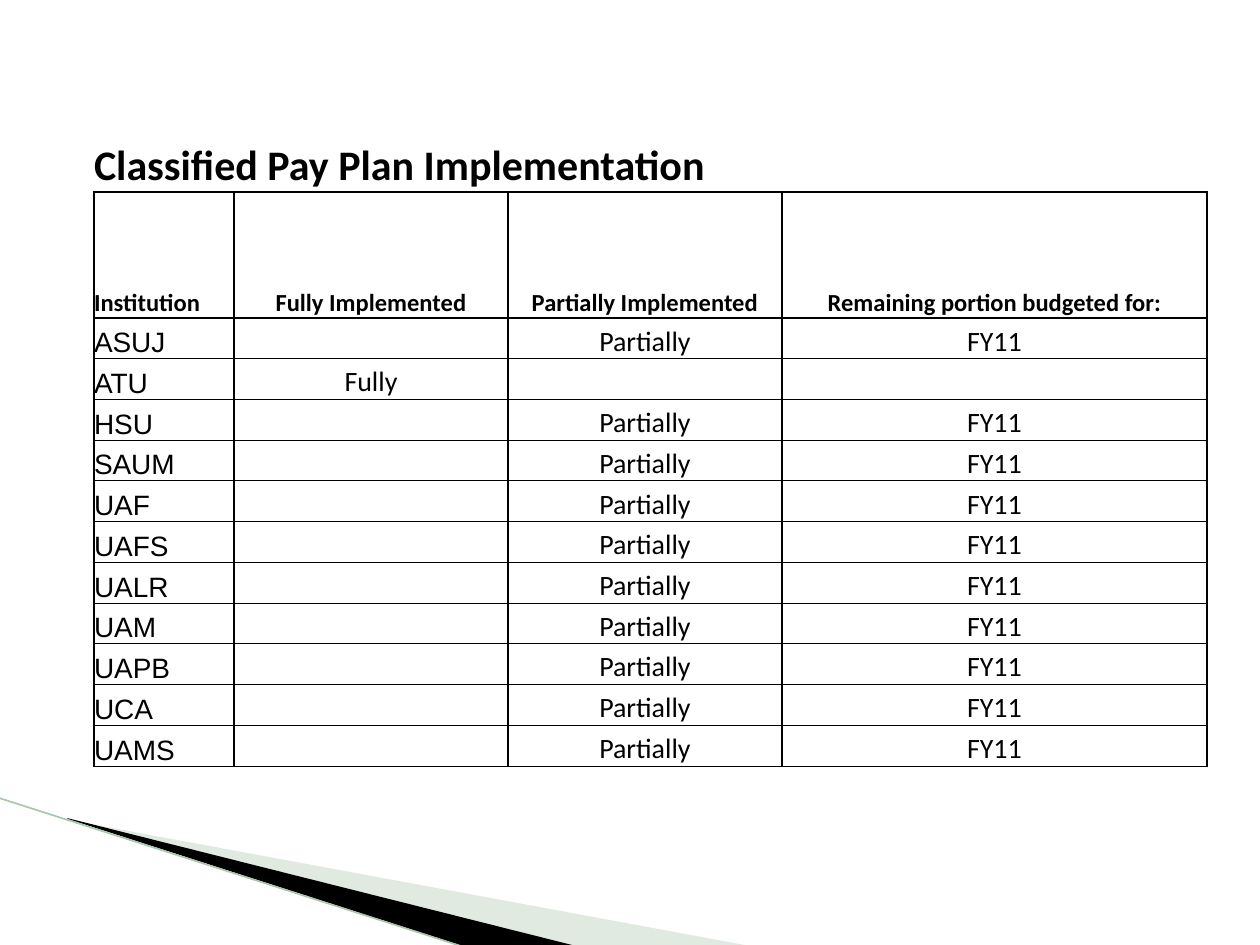
"""Build the pay plan implementation slide."""
from lxml import etree
from pptx import Presentation
from pptx.dml.color import RGBColor
from pptx.enum.shapes import MSO_CONNECTOR
from pptx.enum.text import MSO_ANCHOR, PP_ALIGN
from pptx.oxml.ns import qn
from pptx.util import Emu, Pt

SCALE = 914400 / 126
LEFT, CENTER = PP_ALIGN.LEFT, PP_ALIGN.CENTER
BOTTOM = MSO_ANCHOR.BOTTOM
STRAIGHT = MSO_CONNECTOR.STRAIGHT
BLANK_LAYOUT = 6

BLACK = RGBColor(0x00, 0x00, 0x00)
PALE_GREEN = RGBColor(0xB3, 0xCB, 0xB5)
EDGE_GREEN = RGBColor(0xAC, 0xC6, 0xAE)

PALE_WEDGE = [(69, 820), (750, 946), (575, 946), (69, 819)]
BLACK_WEDGE = [(67, 818), (576, 946), (469, 948), (68, 819)]
EDGE = [(-1, 798), (467, 948)]

TITLE = "Classified Pay Plan Implementation"
HEADINGS = ["Institution", "Fully Implemented", "Partially Implemented",
            "Remaining portion budgeted for:"]
INSTITUTIONS = ["ASUJ", "ATU", "HSU", "SAUM", "UAF", "UAFS", "UALR", "UAM",
                "UAPB", "UCA", "UAMS"]
FULLY_IMPLEMENTED = {"ATU"}

TABLE_LEFT, TABLE_TOP = 94, 105
COLUMN_WIDTHS = [140, 274, 274, 425]
TITLE_HEIGHT, HEADING_HEIGHT, BODY_HEIGHT = 87, 126, 448

TITLE_FONT = {"name": "Calibri", "size": Pt(24), "bold": True}
HEADING_FONT = {"name": "Calibri", "size": Pt(14), "bold": True}
NAME_FONT = {"name": "Arial", "size": Pt(16), "bold": False}
STATUS_FONT = {"name": "Calibri", "size": Pt(16), "bold": False}


def px(length):
    """Turn pixels into EMU."""
    return Emu(round(length * SCALE))


def add_wedge(slide, points, color, opacity=None):
    """Add a filled polygon, optionally see-through."""
    builder = slide.shapes.build_freeform(*points[0], scale=SCALE)
    builder.add_line_segments(points[1:], close=True)
    shape = builder.convert_to_shape()
    shape.shadow.inherit = False
    shape.fill.solid()
    shape.fill.fore_color.rgb = color
    shape.line.fill.background()
    if opacity is not None:
        fill_color = shape.fill._xPr.find(qn("a:solidFill"))[0]
        etree.SubElement(fill_color, qn("a:alpha"), val=str(opacity * 1000))


def add_edge(slide, start, end):
    """Add the thin line along the wedges."""
    connector = slide.shapes.add_connector(
        STRAIGHT, *(px(value) for value in start + end))
    connector.line.color.rgb = EDGE_GREEN
    connector.line.width = Pt(0.95)
    etree.SubElement(connector._element.spPr, qn("a:effectLst"))


def set_borders(cell, widths):
    """Draw the left, right, top and bottom borders; zero hides one."""
    properties = cell._tc.get_or_add_tcPr()
    for side, width in zip("LRTB", widths):
        line = etree.SubElement(properties, qn(f"a:ln{side}"), w=str(Pt(width)))
        if width:
            fill = etree.SubElement(line, qn("a:solidFill"))
            etree.SubElement(fill, qn("a:srgbClr"), val=str(BLACK))
        else:
            etree.SubElement(line, qn("a:noFill"))


def fill_cell(cell, text, font, alignment, borders):
    """Write and format one table cell."""
    set_borders(cell, borders)
    cell.fill.background()
    cell.vertical_anchor = BOTTOM
    for side in ("left", "right", "top", "bottom"):
        setattr(cell, f"margin_{side}", 0)
    cell.text = text
    paragraph = cell.text_frame.paragraphs[0]
    paragraph.alignment = alignment
    for name, value in font.items():
        setattr(paragraph.font, name, value)
    paragraph.font.color.rgb = BLACK


def status_row(institution):
    """Return the cell texts of one institution."""
    if institution in FULLY_IMPLEMENTED:
        return [institution, "Fully", "", ""]
    return [institution, "", "Partially", "FY11"]


def add_plan_table(slide):
    """Add the table with its title, headings and institutions."""
    count = len(INSTITUTIONS)
    heights = [px(TITLE_HEIGHT), px(HEADING_HEIGHT)]
    heights += [px(BODY_HEIGHT / count)] * count
    table = slide.shapes.add_table(
        len(heights), len(COLUMN_WIDTHS), px(TABLE_LEFT), px(TABLE_TOP),
        px(sum(COLUMN_WIDTHS)), sum(heights)).table
    table.first_row = table.horz_banding = False
    for column, width in zip(table.columns, COLUMN_WIDTHS):
        column.width = px(width)
    for row, height in zip(table.rows, heights):
        row.height = height

    table.cell(0, 0).merge(table.cell(0, len(COLUMN_WIDTHS) - 1))
    for index, cell in enumerate(table.rows[0].cells):
        fill_cell(cell, "" if index else TITLE, TITLE_FONT, LEFT, (0, 0, 0, 1))
    for index, (cell, text) in enumerate(zip(table.rows[1].cells, HEADINGS)):
        fill_cell(cell, text, HEADING_FONT, CENTER if index else LEFT,
                  (1, 1, 1, 1))
    for number, institution in enumerate(INSTITUTIONS):
        borders = (1, 1, 0.5 if number else 1, 0.5)
        cells = table.rows[number + 2].cells
        for index, (cell, text) in enumerate(zip(cells, status_row(institution))):
            fill_cell(cell, text, STATUS_FONT if index else NAME_FONT,
                      CENTER if index else LEFT, borders)


def main():
    """Build and save the presentation."""
    presentation = Presentation()
    presentation.slide_width, presentation.slide_height = px(1260), px(945)
    slide = presentation.slides.add_slide(
        presentation.slide_layouts[BLANK_LAYOUT])
    add_wedge(slide, PALE_WEDGE, PALE_GREEN, opacity=40)
    add_wedge(slide, BLACK_WEDGE, BLACK)
    add_edge(slide, *EDGE)
    add_plan_table(slide)
    presentation.save("out.pptx")


if __name__ == "__main__":
    main()
